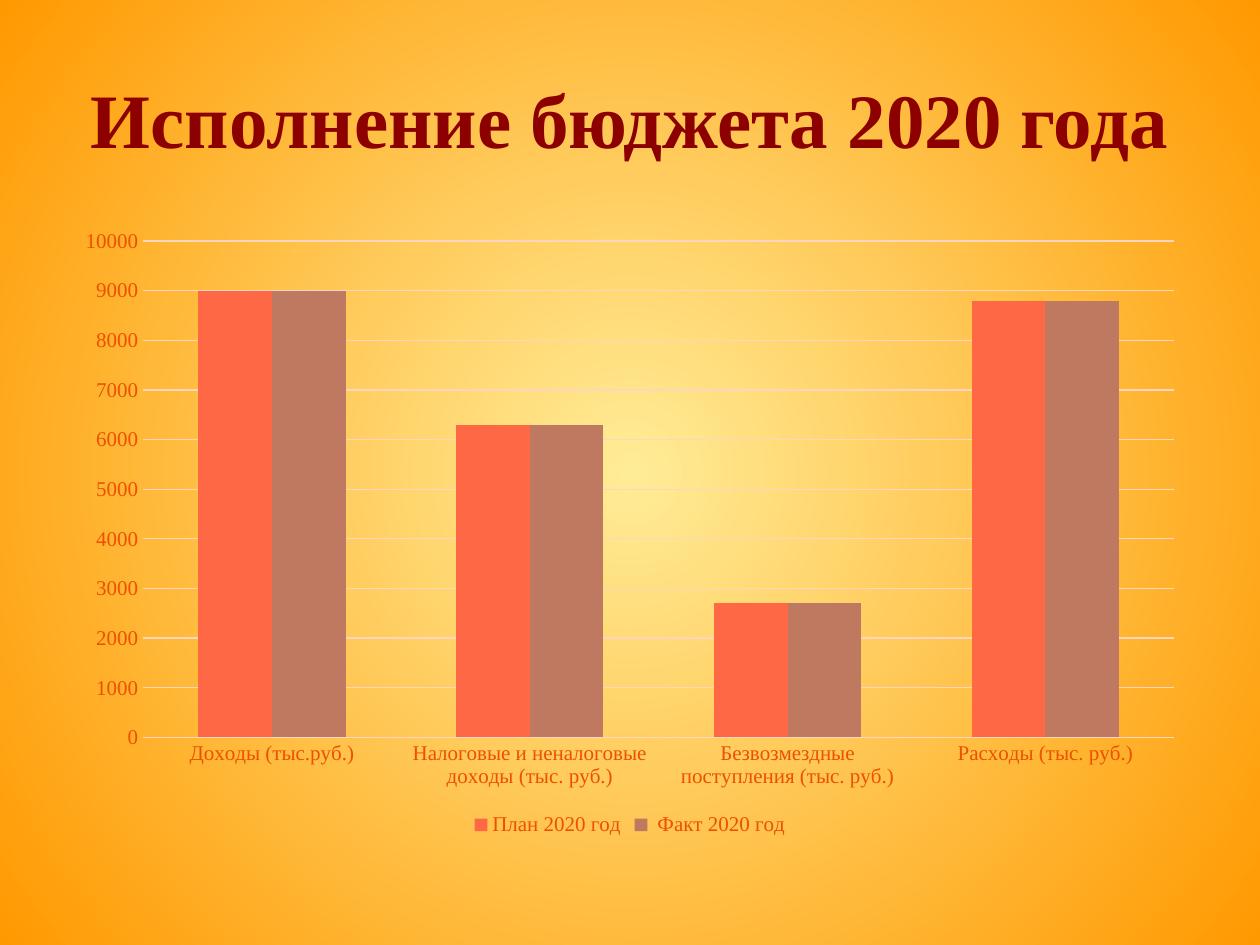
import pptx
import pptx.chart.data
import pptx.dml.color
import pptx.enum.chart
import pptx.enum.text
import pptx.oxml
import pptx.oxml.ns
import pptx.util
from dataclasses import dataclass


@dataclass(frozen=True)
class Theme:
    font: str = "Times New Roman"
    glow: str = "FFEC97"
    edge: str = "FF9900"
    title: str = "8C0000"
    label: str = "EE5000"
    grid: str = "FFD5C0"
    series: tuple = ("FF6845", "BE7960")
    title_size: int = 44
    label_size: int = 12
    grid_width: float = 0.75


THEME = Theme()
WIDTH, HEIGHT = pptx.util.Inches(10), pptx.util.Inches(7.5)

CATEGORIES = (
    "Доходы (тыс.руб.)",
    "Налоговые и неналоговые доходы (тыс. руб.)",
    "Безвозмездные поступления (тыс. руб.)",
    "Расходы (тыс. руб.)",
)
SERIES = {
    "План 2020 год": (9000, 6300, 2700, 8800),
    " Факт 2020 год": (9000, 6300, 2700, 8800),
}


def rgb(value):
    return pptx.dml.color.RGBColor.from_string(value)


def share(left, top, width, height):
    """Turn shares of the slide's size into a box."""
    return (int(left * WIDTH), int(top * HEIGHT),
            int(width * WIDTH), int(height * HEIGHT))


def set_font(font, size, color, bold=False):
    font.name = THEME.font
    font.size = pptx.util.Pt(size)
    font.bold = bold
    font.color.rgb = rgb(color)


def paint_background(s):
    fill = s.background.fill
    fill.gradient()
    for stop, color in zip(fill.gradient_stops, (THEME.glow, THEME.edge)):
        stop.color.rgb = rgb(color)
    # Radiate from the centre instead of running in a line
    lin = next(s.element.iter(pptx.oxml.ns.qn("a:lin")))
    radial = pptx.oxml.parse_xml(
        f'<a:path {pptx.oxml.ns.nsdecls("a")} path="circle">'
        '<a:fillToRect l="50000" t="50000" r="50000" b="50000"/></a:path>')
    lin.getparent().replace(lin, radial)


def add_title(s, box, text):
    tf = s.shapes.add_textbox(*box).text_frame
    tf.word_wrap = True
    tf.vertical_anchor = pptx.enum.text.MSO_ANCHOR.MIDDLE
    p = tf.paragraphs[0]
    p.text = text
    p.alignment = pptx.enum.text.PP_ALIGN.CENTER
    set_font(p.font, THEME.title_size, THEME.title, bold=True)


def add_budget_chart(s, box):
    data = pptx.chart.data.CategoryChartData()
    data.categories = CATEGORIES
    for name, values in SERIES.items():
        data.add_series(name, values)
    chart = s.shapes.add_chart(
        pptx.enum.chart.XL_CHART_TYPE.COLUMN_CLUSTERED, *box, data).chart
    chart.has_title = False
    set_font(chart.font, THEME.label_size, THEME.label)

    # Columns
    plot = chart.plots[0]
    plot.vary_by_categories = False
    plot.gap_width = 150
    plot.overlap = 0
    for series, color in zip(plot.series, THEME.series):
        series.format.fill.solid()
        series.format.fill.fore_color.rgb = rgb(color)

    # Axes and gridlines
    for axis in (chart.category_axis, chart.value_axis):
        axis.major_tick_mark = pptx.enum.chart.XL_TICK_MARK.NONE
        axis.minor_tick_mark = pptx.enum.chart.XL_TICK_MARK.NONE
        axis.format.line.fill.background()
        set_font(axis.tick_labels.font, THEME.label_size, THEME.label)
    value_axis = chart.value_axis
    value_axis.minimum_scale = 0
    value_axis.maximum_scale = 10000
    value_axis.major_unit = 1000
    value_axis.has_major_gridlines = True
    line = value_axis.major_gridlines.format.line
    line.color.rgb = rgb(THEME.grid)
    line.width = pptx.util.Pt(THEME.grid_width)

    # Legend
    chart.has_legend = True
    chart.legend.position = pptx.enum.chart.XL_LEGEND_POSITION.BOTTOM
    chart.legend.include_in_layout = False
    set_font(chart.legend.font, THEME.label_size, THEME.label)


def main():
    prs = pptx.Presentation()
    prs.slide_width, prs.slide_height = WIDTH, HEIGHT
    s = prs.slides.add_slide(prs.slide_layouts[6])
    paint_background(s)
    add_title(s, share(0.05, 0.04, 0.9, 0.17), "Исполнение бюджета 2020 года")
    add_budget_chart(s, share(0.05, 0.23, 0.9, 0.66))
    prs.save("out.pptx")


if __name__ == "__main__":
    main()
